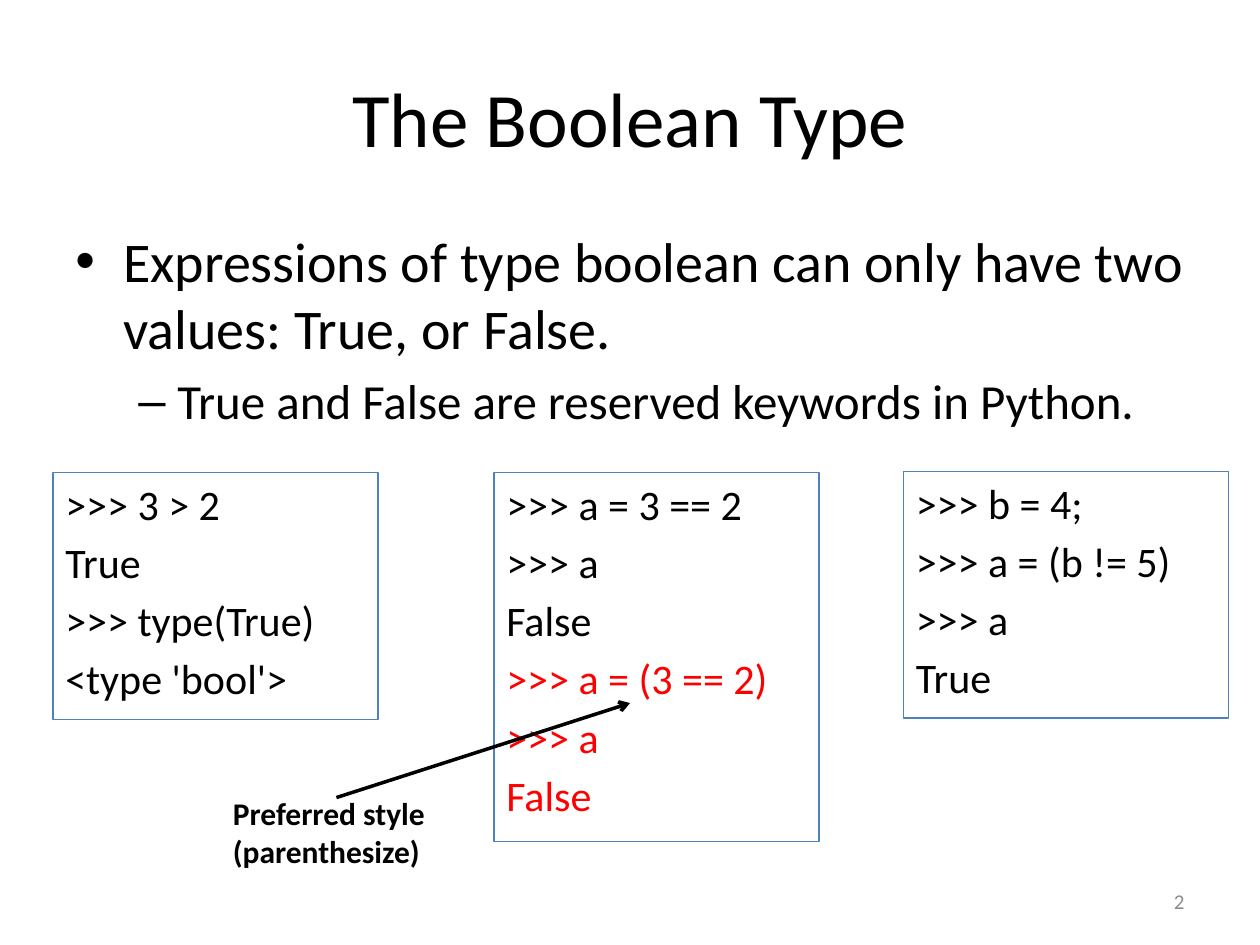
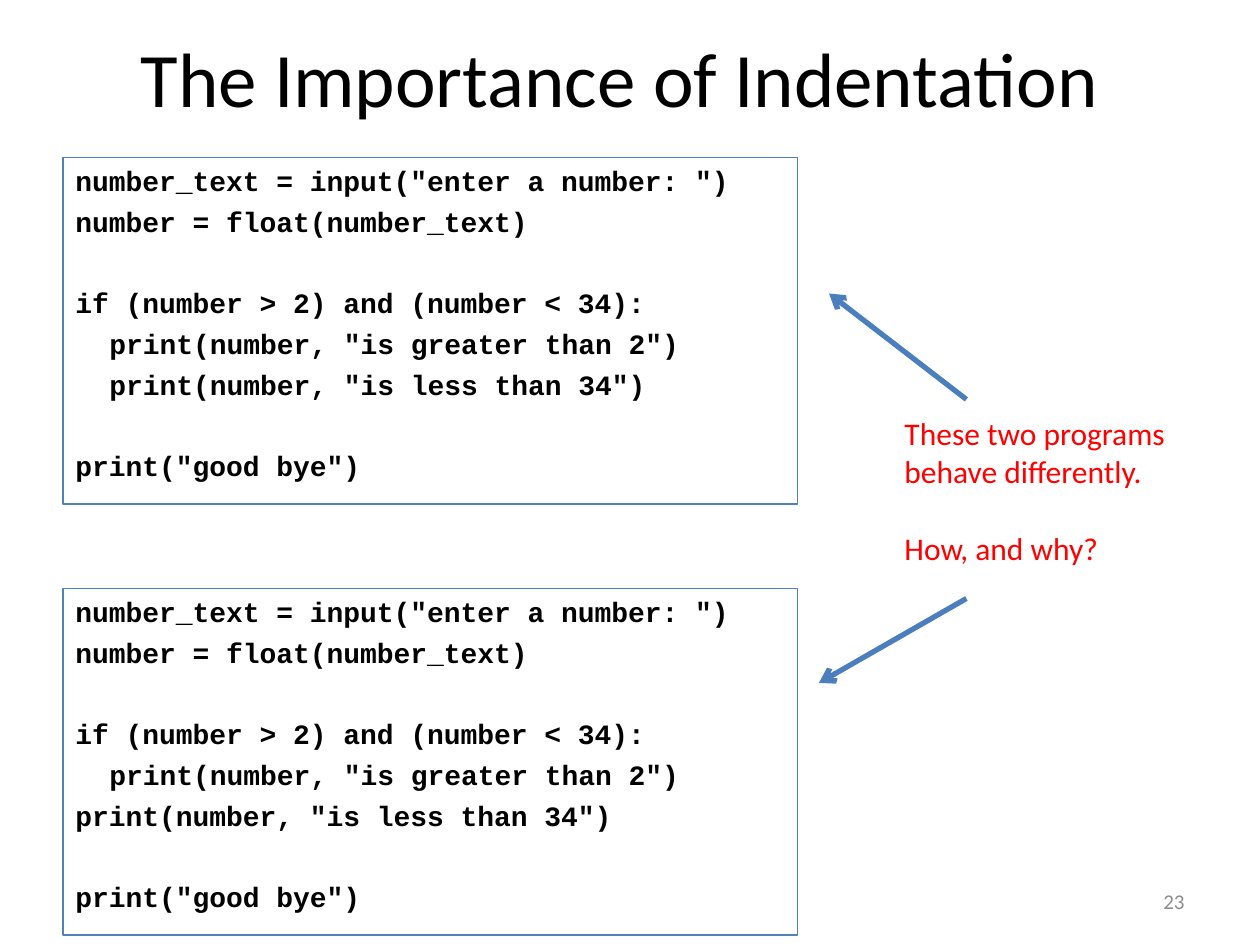
from dataclasses import dataclass

from lxml import etree
from pptx import Presentation
from pptx.dml.color import RGBColor
from pptx.enum.shapes import MSO_CONNECTOR, MSO_SHAPE
from pptx.enum.text import MSO_ANCHOR, PP_ALIGN
from pptx.oxml.ns import qn
from pptx.shapes.autoshape import Shape
from pptx.slide import Slide
from pptx.util import Inches, Pt

BLACK = RGBColor(0x00, 0x00, 0x00)
RED = RGBColor(0xFF, 0x00, 0x00)
GREY = RGBColor(0x8C, 0x8C, 0x8C)
OUTLINE_BLUE = RGBColor(0x4F, 0x81, 0xBD)
ARROW_BLUE = RGBColor(0x4B, 0x7E, 0xBC)

BODY_FONT = "Calibri"
CODE_FONT = "Courier New"
LEFT, CENTER, RIGHT = PP_ALIGN.LEFT, PP_ALIGN.CENTER, PP_ALIGN.RIGHT
TOP, MIDDLE = MSO_ANCHOR.TOP, MSO_ANCHOR.MIDDLE
RECTANGLE = MSO_SHAPE.RECTANGLE
STRAIGHT = MSO_CONNECTOR.STRAIGHT

FIRST_SPACING = 1.5  # points above the first line of a spaced text
LINE_SPACING = 4.4  # points above every later line
CODE_GAP = 22.4  # points in place of an empty code line
CODE_INDENT = 0.27  # two characters of code, in inches


@dataclass(frozen=True)
class Box:
    left: float
    top: float
    width: float
    height: float


@dataclass(frozen=True)
class Line:
    text: str
    color: RGBColor = BLACK
    size: float | None = None
    margin: float = 0
    hanging: float = 0
    bullet: str = ""
    gap: float = 0


@dataclass(frozen=True)
class Console:
    box: Box
    lines: list[Line]


@dataclass(frozen=True)
class Arrow:
    start: tuple[float, float]
    end: tuple[float, float]
    color: RGBColor
    width: float


def write_text(shape: Shape, lines: list[Line], *, size: float, font: str = BODY_FONT,
               bold: bool = False, align: PP_ALIGN = LEFT, anchor: MSO_ANCHOR = TOP,
               wrap: bool = True, first_spacing: float = 0, spacing: float = 0) -> None:
    """Fill a shape with one paragraph for each line."""
    frame = shape.text_frame
    frame.word_wrap = wrap
    frame.vertical_anchor = anchor
    for index, line in enumerate(lines):
        paragraph = frame.add_paragraph() if index else frame.paragraphs[0]
        paragraph.text = line.text
        paragraph.alignment = align
        paragraph.space_before = Pt((spacing if index else first_spacing) + line.gap)
        paragraph.font.name = font
        paragraph.font.size = Pt(line.size or size)
        paragraph.font.bold = bold
        paragraph.font.color.rgb = line.color
        set_indent(paragraph, line)


def set_indent(paragraph, line: Line) -> None:
    """Set the left margin, hanging indent and bullet of a paragraph."""
    properties = paragraph._p.get_or_add_pPr()
    properties.set("marL", str(Inches(line.margin)))
    properties.set("indent", str(-Inches(line.hanging)))
    if line.bullet:
        font = etree.Element(qn("a:buFont"), typeface="Arial")
        bullet = etree.Element(qn("a:buChar"), char=line.bullet)
        position = properties.index(properties.find(qn("a:spcBef"))) + 1
        properties[position:position] = [font, bullet]


def add_text(slide: Slide, box: Box, lines: list[Line], **text_format) -> None:
    shape = slide.shapes.add_textbox(Inches(box.left), Inches(box.top),
                                     Inches(box.width), Inches(box.height))
    write_text(shape, lines, **text_format)


def add_frame(slide: Slide, box: Box, lines: list[Line], **text_format) -> None:
    """Draw a thin outlined rectangle that holds code."""
    shape = slide.shapes.add_shape(RECTANGLE, Inches(box.left), Inches(box.top),
                                   Inches(box.width), Inches(box.height))
    shape.shadow.inherit = False
    shape.fill.background()
    shape.line.color.rgb = OUTLINE_BLUE
    shape.line.width = Pt(0.75)
    write_text(shape, lines, first_spacing=FIRST_SPACING, spacing=LINE_SPACING,
               **text_format)


def add_arrow(slide: Slide, arrow: Arrow) -> None:
    points = [Inches(value) for value in (*arrow.start, *arrow.end)]
    connector = slide.shapes.add_connector(STRAIGHT, *points)
    connector.line.color.rgb = arrow.color
    connector.line.width = Pt(arrow.width)
    etree.SubElement(connector.line._get_or_add_ln(), qn("a:tailEnd"), type="arrow")
    etree.SubElement(connector._element.spPr, qn("a:effectLst"))


def add_base_slide(presentation: Presentation, title: str, title_box: Box,
                   number: int) -> Slide:
    """Add a blank slide with the shared title style and page number."""
    slide = presentation.slides.add_slide(presentation.slide_layouts[6])
    add_text(slide, title_box, [Line(title)], size=44, align=CENTER, anchor=MIDDLE)
    add_text(slide, Box(7.17, 6.95, 2.33, 0.4), [Line(str(number), GREY)],
             size=12, align=RIGHT, anchor=MIDDLE)
    return slide


def build_boolean_slide(presentation: Presentation) -> None:
    slide = add_base_slide(presentation, "The Boolean Type", Box(0.5, 0.3, 9, 1.25), 2)
    add_text(slide, Box(0.5, 1.75, 9, 2.08), [
        Line("Expressions of type boolean can only have two values: True, or False.",
             margin=0.38, hanging=0.38, bullet="•"),
        Line("True and False are reserved keywords in Python.", size=28,
             margin=0.81, hanging=0.31, bullet="–"),
    ], size=32, first_spacing=FIRST_SPACING, spacing=5.6)

    # Console sessions
    consoles = [
        Console(Box(0.42, 3.75, 2.58, 1.96), [
            Line(">>> 3 > 2"), Line("True"), Line(">>> type(True)"), Line("<type 'bool'>")]),
        Console(Box(3.92, 3.75, 2.58, 2.93), [
            Line(">>> a = 3 == 2"), Line(">>> a"), Line("False"),
            Line(">>> a = (3 == 2)", RED), Line(">>> a", RED), Line("False", RED)]),
        Console(Box(7.17, 3.74, 2.58, 1.96), [
            Line(">>> b = 4;"), Line(">>> a = (b != 5)"), Line(">>> a"), Line("True")]),
    ]
    for console in consoles:
        add_frame(slide, console.box, console.lines, size=24)

    # Style hint
    add_text(slide, Box(1.75, 6.25, 1.74, 0.71),
             [Line("Preferred style"), Line("(parenthesize)")],
             size=18, bold=True, wrap=False)
    add_arrow(slide, Arrow((2.67, 6.33), (5, 5.58), BLACK, 2))


def program_lines(last_print_margin: float) -> list[Line]:
    """Return the program; only the margin of its second print differs."""
    return [
        Line('number_text = input("enter a number: ")'),
        Line("number = float(number_text)"),
        Line("if (number > 2) and (number < 34):", gap=CODE_GAP),
        Line('print(number, "is greater than 2")', margin=CODE_INDENT),
        Line('print(number, "is less than 34")', margin=last_print_margin),
        Line('print("good bye")', gap=CODE_GAP),
    ]


def build_indentation_slide(presentation: Presentation) -> None:
    slide = add_base_slide(presentation, "The Importance of Indentation",
                           Box(0.42, 0.05, 9, 1.12), 23)

    # The two programs
    for top, margin in ((1.25, CODE_INDENT), (4.67, 0)):
        add_frame(slide, Box(0.5, top, 5.83, 2.75), program_lines(margin),
                  size=16, font=CODE_FONT, bold=True)

    # Question with an arrow to each program
    add_text(slide, Box(7.08, 3.24, 2.35, 1.31), [
        Line("These two programs\vbehave differently.", RED),
        Line("How, and why?", RED, gap=22),
    ], size=18, wrap=False)
    for start, end in (((7.67, 3.17), (6.58, 2.33)), ((7.67, 4.75), (6.5, 5.42))):
        add_arrow(slide, Arrow(start, end, ARROW_BLUE, 3))


def main() -> None:
    presentation = Presentation()
    presentation.slide_width = Inches(10)
    presentation.slide_height = Inches(7.5)
    build_boolean_slide(presentation)
    build_indentation_slide(presentation)
    presentation.save("out.pptx")


if __name__ == "__main__":
    main()
